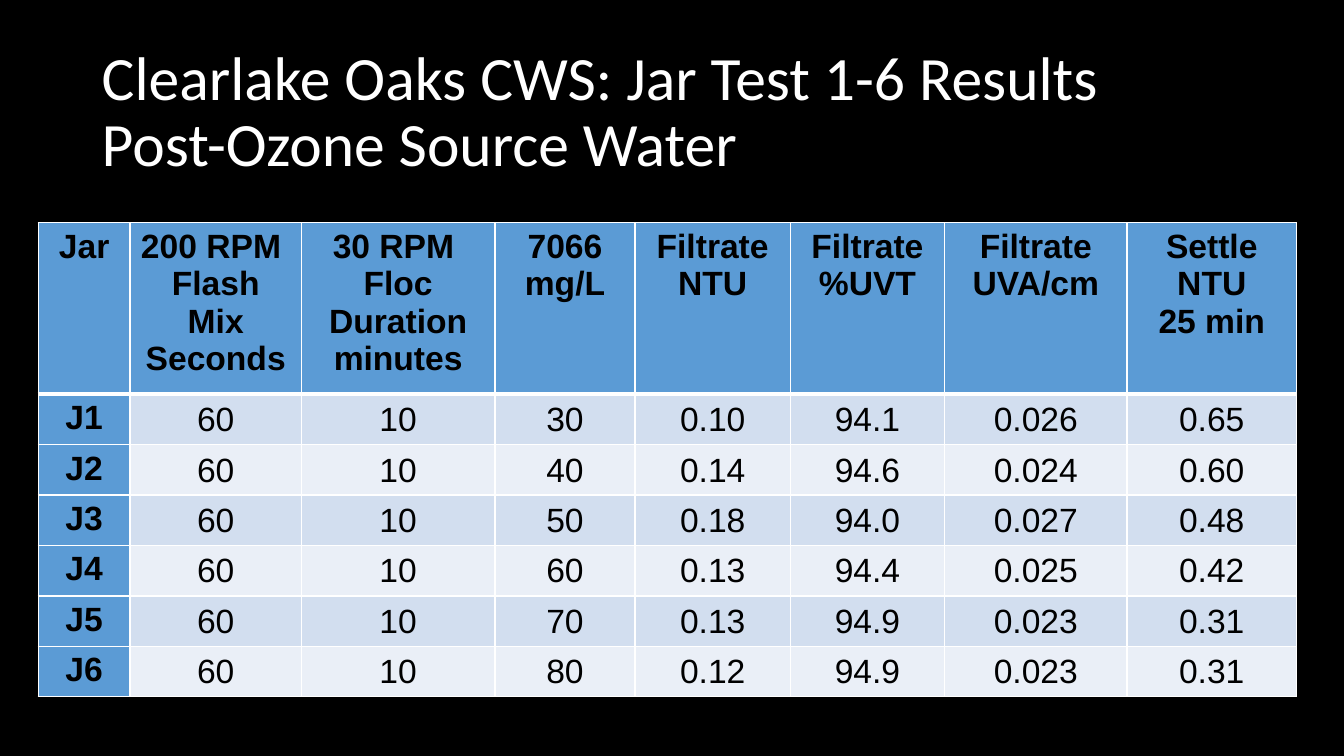
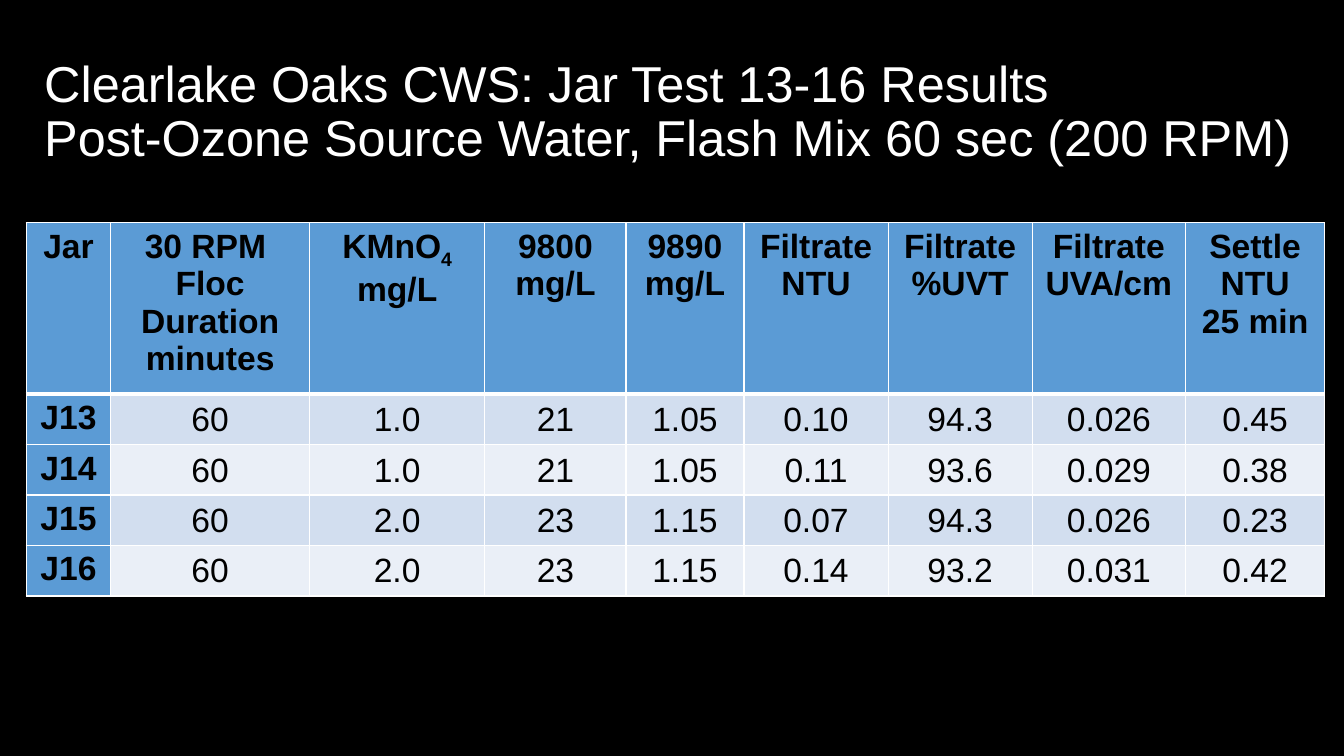
import pptx
import pptx.dml.color
import pptx.enum.text
import pptx.oxml
import pptx.oxml.ns
import pptx.util

WIDTH = pptx.util.Inches(13.33)
HEIGHT = pptx.util.Inches(7.5)
COLOURS = {
    "page": "000000",
    "title": "FFFFFF",
    "text": "000000",
    "border": "FFFFFF",
    "head": "5B9BD5",
    "odd": "D2DEEF",
    "even": "EAEFF7",
}

# Vertical layout shared by the slides, in percent of the slide height
TITLE_TOP, TITLE_HEIGHT = 5.33, 19.33
TABLE_TOP, HEAD_ROW, BODY_ROW = 29.47, 21.07, 6.27

# Cell formats: labels (top row and first column) and readings
LABEL_CELL = {"margin_left": 0.1, "margin_right": 0.1,
              "margin_top": 0.05, "margin_bottom": 0.05}
READING_CELL = {"margin_left": 0.01, "margin_right": 0.01,
                "margin_top": 0.01, "margin_bottom": 0}
ANCHOR = pptx.enum.text.MSO_ANCHOR

# Column headings: "|" starts a new line, "_" a subscript
FLOC = "30 RPM |Floc|Duration|minutes"
OUTCOMES = ["Filtrate|NTU", "Filtrate|%UVT", "Filtrate|UVA/cm", "Settle|NTU|25 min"]

# Boxes are (left, width) in percent of the slide width
SLIDES = [
    {
        "title": ["Clearlake Oaks CWS: Jar Test 1-6 Results",
                  "Post-Ozone Source Water"],
        "title_box": (6.83, 86.35),
        "title_font": {"name": "Calibri", "size": pptx.util.Pt(44)},
        "table_box": (2.85, 93.62),
        "columns": [0.91, 1.7, 1.92, 1.39, 1.54, 1.53, 1.81, 1.68],
        "headings": ["Jar", "200 RPM |Flash|Mix|Seconds", FLOC, "7066|mg/L"] + OUTCOMES,
        "rows": [
            ["J1", "60", "10", "30", "0.10", "94.1", "0.026", "0.65"],
            ["J2", "60", "10", "40", "0.14", "94.6", "0.024", "0.60"],
            ["J3", "60", "10", "50", "0.18", "94.0", "0.027", "0.48"],
            ["J4", "60", "10", "60", "0.13", "94.4", "0.025", "0.42"],
            ["J5", "60", "10", "70", "0.13", "94.9", "0.023", "0.31"],
            ["J6", "60", "10", "80", "0.12", "94.9", "0.023", "0.31"],
        ],
    },
    {
        "title": ["Clearlake Oaks CWS: Jar Test 13-16 Results",
                  "Post-Ozone Source Water, Flash Mix 60 sec (200 RPM)"],
        "title_box": (2.55, 95.27),
        "title_font": {"name": "Arial", "size": pptx.util.Pt(36)},
        "table_box": (1.95, 96.62),
        "columns": [0.84, 1.97, 1.74, 1.4, 1.17, 1.43, 1.43, 1.52, 1.38],
        "headings": ["Jar", FLOC, "KMnO_4|mg/L", "9800|mg/L", "9890|mg/L"] + OUTCOMES,
        "rows": [
            ["J13", "60", "1.0", "21", "1.05", "0.10", "94.3", "0.026", "0.45"],
            ["J14", "60", "1.0", "21", "1.05", "0.11", "93.6", "0.029", "0.38"],
            ["J15", "60", "2.0", "23", "1.15", "0.07", "94.3", "0.026", "0.23"],
            ["J16", "60", "2.0", "23", "1.15", "0.14", "93.2", "0.031", "0.42"],
        ],
    },
]


def across(percent):
    return round(WIDTH * percent / 100)


def down(percent):
    return round(HEIGHT * percent / 100)


def paint(fill, colour):
    fill.solid()
    fill.fore_color.rgb = pptx.dml.color.RGBColor.from_string(COLOURS[colour])


def set_font(font, colour, formats):
    for name, value in formats.items():
        setattr(font, name, value)
    paint(font.fill, colour)


def set_borders(cell, widths):
    """Draw the left, right, top and bottom borders, widths in points."""
    properties = cell._tc.get_or_add_tcPr()
    for place, (side, width) in enumerate(zip("LRTB", widths)):
        properties.insert(place, pptx.oxml.parse_xml(
            f'<a:ln{side} {pptx.oxml.ns.nsdecls("a")} w="{pptx.util.Pt(width)}">'
            f'<a:solidFill><a:srgbClr val="{COLOURS["border"]}"/></a:solidFill>'
            f'</a:ln{side}>'))


def add_title(page, box, lines, formats):
    left, width = box
    frame = page.shapes.add_textbox(
        across(left), down(TITLE_TOP), across(width), down(TITLE_HEIGHT)).text_frame
    frame.word_wrap = True
    frame.vertical_anchor = ANCHOR.MIDDLE
    para = frame.paragraphs[0]
    para.line_spacing = 0.9
    for number, line in enumerate(lines):
        if number:
            para.add_line_break()
        span = para.add_run()
        span.text = line
        set_font(span.font, "title", formats)


def write_cell(cell, text, bold):
    frame = cell.text_frame
    for number, line in enumerate(text.split("|")):
        para = frame.add_paragraph() if number else frame.paragraphs[0]
        para.alignment = pptx.enum.text.PP_ALIGN.CENTER
        for position, piece in enumerate(line.split("_")):
            span = para.add_run()
            span.text = piece
            set_font(span.font, "text", {
                "name": "Arial", "size": pptx.util.Pt(24), "bold": bold})
            if position:
                span.font._element.set("baseline", "-25000")


def add_results(page, box, columns, headings, rows):
    left, width = box
    grid = [headings] + rows
    heights = [HEAD_ROW] + [BODY_ROW] * len(rows)
    table = page.shapes.add_table(
        len(grid), len(columns), across(left), down(TABLE_TOP),
        across(width), down(sum(heights))).table
    table.first_row = table.horz_banding = False
    for column, share in zip(table.columns, columns):
        column.width = across(width * share / sum(columns))
    for row, height in zip(table.rows, heights):
        row.height = down(height)

    for row, texts in enumerate(grid):
        for column, text in enumerate(texts):
            cell = table.cell(row, column)
            label = row == 0 or column == 0
            for name, inches in (LABEL_CELL if label else READING_CELL).items():
                setattr(cell, name, pptx.util.Inches(inches))
            cell.vertical_anchor = ANCHOR.TOP if label else ANCHOR.MIDDLE
            paint(cell.fill, "head" if label else "odd" if row % 2 else "even")
            # The rule below the headings is thicker
            set_borders(cell, (1, 1, 3 if row == 1 else 1, 3 if row == 0 else 1))
            write_cell(cell, text, label)


def main():
    deck = pptx.Presentation()
    deck.slide_width, deck.slide_height = WIDTH, HEIGHT
    paint(deck.slide_master.background.fill, "page")
    for content in SLIDES:
        page = deck.slides.add_slide(deck.slide_layouts[6])
        add_title(page, content["title_box"], content["title"], content["title_font"])
        add_results(page, content["table_box"], content["columns"],
                    content["headings"], content["rows"])
    deck.save("out.pptx")


if __name__ == "__main__":
    main()
